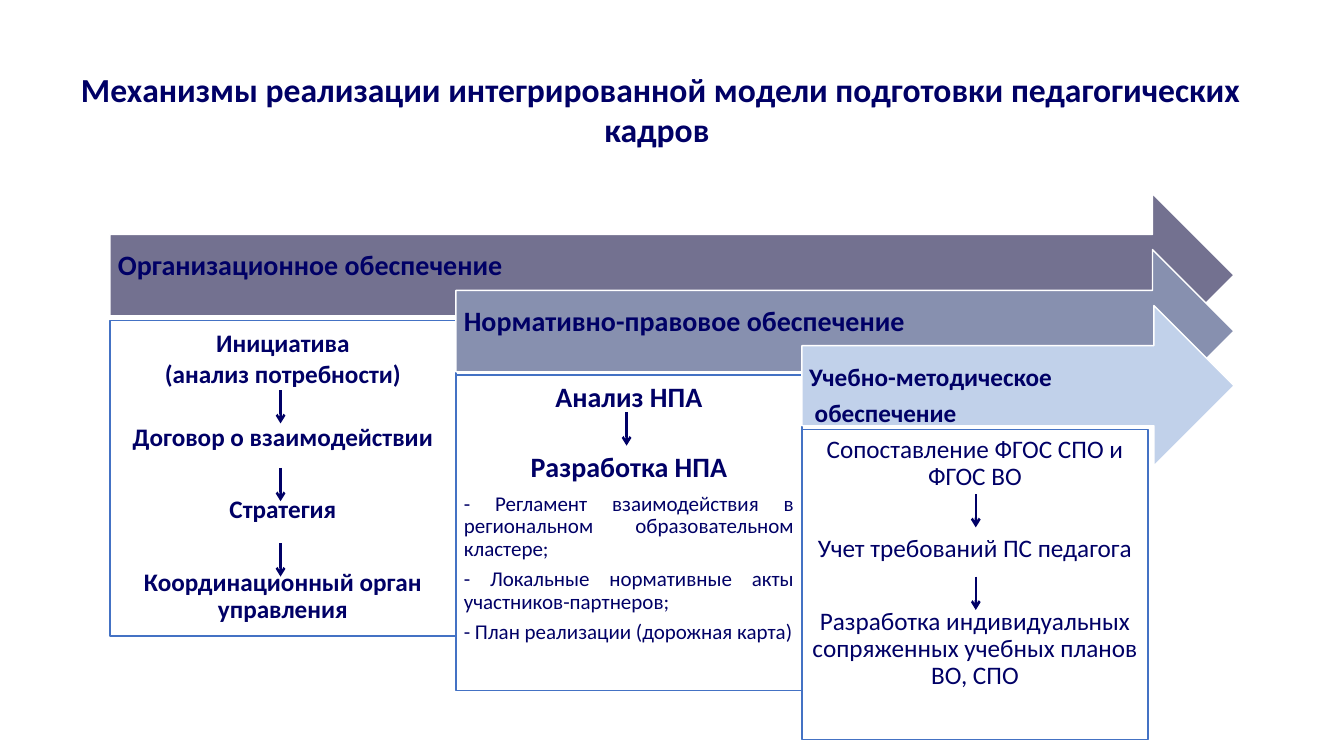
"""Build a slide with three stepped arrows and the measures under each of them."""
from dataclasses import dataclass

from lxml import etree
from pptx import Presentation
from pptx.dml.color import RGBColor
from pptx.enum import shapes, text
from pptx.oxml.ns import qn
from pptx.util import Cm, Pt


@dataclass(frozen=True)
class Theme:
    """Colours, font and type sizes of the slide."""
    ink: str = "000066"
    paper: str = "FFFFFF"
    border: str = "4472C4"
    arrows: tuple = ("737190", "8790AF", "C1D1EA")
    font: str = "Calibri"
    title: int = 24
    large: int = 20
    medium: int = 18
    small: int = 15


THEME = Theme()
LEFT, CENTER, JUSTIFY = text.PP_ALIGN.LEFT, text.PP_ALIGN.CENTER, text.PP_ALIGN.JUSTIFY
MIDDLE, TOP = text.MSO_ANCHOR.MIDDLE, text.MSO_ANCHOR.TOP

TITLE = "Механизмы реализации интегрированной модели подготовки педагогических кадров "
HEADING = dict(size=THEME.large, bold=True)
SUBHEADING = dict(size=THEME.medium, bold=True)
STEP = dict(size=THEME.medium, bold=True, align=CENTER)
STAGE = dict(size=THEME.large, bold=True, align=CENTER)
PLAIN = dict(size=THEME.medium, align=CENTER)
DOCUMENT = dict(size=THEME.small, align=JUSTIFY)

COLUMNS = [
    dict(
        heading=[("Организационное обеспечение", HEADING)],
        heading_anchor=MIDDLE, heading_insets=(0.2, 0.2, 0.71, 0.66),
        arrow_height=4.11, box_height=7.95, inset=0.18,
        body=[
            ("Инициатива", dict(STEP, after=0, spacing=1.0)),
            ("(анализ потребности)", dict(STEP, after=0, spacing=1.0)),
            ("Договор о взаимодействии", dict(STEP, before=26)),
            ("Стратегия", dict(STEP, before=26)),
            ("Координационный орган управления", dict(STEP, before=26)),
        ],
        link_offset=4.3, link_tops=(9.83, 11.79, 13.69),
    ),
    dict(
        heading=[("Нормативно-правовое обеспечение", HEADING)],
        heading_anchor=MIDDLE, heading_insets=(0.2, 0.2, 0.71, 0.66),
        arrow_height=4.11, box_height=7.95, inset=0.2,
        body=[
            ("Анализ НПА", STAGE),
            ("Разработка НПА", dict(STAGE, before=21.5)),
            ("- Регламент взаимодействия в региональном образовательном кластере;", DOCUMENT),
            ("- Локальные нормативные акты участников-партнеров;", DOCUMENT),
            ("- План реализации (дорожная карта)", DOCUMENT),
        ],
        link_offset=4.3, link_tops=(10.39,),
    ),
    dict(
        heading=[("Учебно-методическое", SUBHEADING), (" обеспечение", SUBHEADING)],
        heading_anchor=TOP, heading_insets=(0.18, 0.48, 0.71, 0),
        arrow_height=4.04, box_height=7.82, inset=0.18,
        body=[
            ("Сопоставление ФГОС СПО и ФГОС ВО", PLAIN),
            ("Учет требований ПС педагога", dict(PLAIN, before=26)),
            ("Разработка индивидуальных сопряженных учебных планов ВО, СПО",
             dict(PLAIN, before=26)),
        ],
        link_offset=4.38, link_tops=(12.45, 14.53),
    ),
]

FIRST_LEFT, COLUMN_WIDTH, ARROW_RIGHT = 2.77, 8.72, 31.1
ARROW_TOP, ARROW_DROP = 4.88, 1.41
BOX_TOP, BOX_DROP = 8.08, 1.37
LINK_LENGTH = 0.84


def write(para, words, *, size, bold=False, align=LEFT, spacing=0.9, before=0, after=None):
    """Put formatted words into a paragraph."""
    para.alignment, para.line_spacing = align, spacing
    para.space_before = Pt(before)
    para.space_after = Pt(0.35 * size if after is None else after)
    span = para.add_run()
    span.text = words
    span.font.name, span.font.size, span.font.bold = THEME.font, Pt(size), bold
    span.font.color.rgb = RGBColor.from_string(THEME.ink)


def fill_frame(frame, lines, anchor, insets):
    """Lay out a list of formatted lines in a text frame."""
    frame.word_wrap, frame.auto_size = True, text.MSO_AUTO_SIZE.NONE
    frame.vertical_anchor = anchor
    (frame.margin_left, frame.margin_top,
     frame.margin_right, frame.margin_bottom) = map(Cm, insets)
    for index, (words, style) in enumerate(lines):
        para = frame.add_paragraph() if index else frame.paragraphs[0]
        write(para, words, **style)


def add_panel(page, kind, place, fill, line):
    """Add a filled and outlined shape and return it."""
    panel = page.shapes.add_shape(kind, *map(Cm, place))
    panel.shadow.inherit = False
    panel.fill.solid()
    panel.fill.fore_color.rgb = RGBColor.from_string(fill)
    panel.line.color.rgb = RGBColor.from_string(line)
    panel.line.width = Pt(1)
    return panel


def add_link(page, x, top):
    """Add a short downward arrow."""
    link = page.shapes.add_connector(
        shapes.MSO_CONNECTOR.STRAIGHT, Cm(x), Cm(top), Cm(x), Cm(top + LINK_LENGTH))
    link.line.color.rgb = RGBColor.from_string(THEME.ink)
    link.line.width = Pt(1.75)
    etree.SubElement(link.line._get_or_add_ln(), qn("a:tailEnd"), type="arrow")
    etree.SubElement(link._element.spPr, qn("a:effectLst"))


def add_column(page, index, column):
    """Add one arrow with its heading and the box below it."""
    left = FIRST_LEFT + index * COLUMN_WIDTH
    arrow = add_panel(
        page, shapes.MSO_SHAPE.RIGHT_ARROW,
        (left, ARROW_TOP + index * ARROW_DROP, ARROW_RIGHT - left, column["arrow_height"]),
        THEME.arrows[index], THEME.paper)
    fill_frame(arrow.text_frame, column["heading"],
               column["heading_anchor"], column["heading_insets"])
    box = add_panel(
        page, shapes.MSO_SHAPE.RECTANGLE,
        (left, BOX_TOP + index * BOX_DROP, COLUMN_WIDTH, column["box_height"]),
        THEME.paper, THEME.border)
    fill_frame(box.text_frame, column["body"], TOP, [column["inset"]] * 4)
    for top in column["link_tops"]:
        add_link(page, left + column["link_offset"], top)


def main():
    """Create and save the deck."""
    deck = Presentation()
    deck.slide_width, deck.slide_height = Cm(33.87), Cm(19.05)
    page = deck.slides.add_slide(deck.slide_layouts[5])
    title = page.shapes.title
    title.left, title.top, title.width, title.height = map(Cm, (1.78, 1.6, 29.74, 2.69))
    style = dict(size=THEME.title, bold=True, align=CENTER, spacing=1.0, after=0)
    fill_frame(title.text_frame, [(TITLE, style)], TOP, (0.25, 0.13, 0.25, 0.13))
    for index, column in enumerate(COLUMNS):
        add_column(page, index, column)
    deck.save("out.pptx")


if __name__ == "__main__":
    main()
